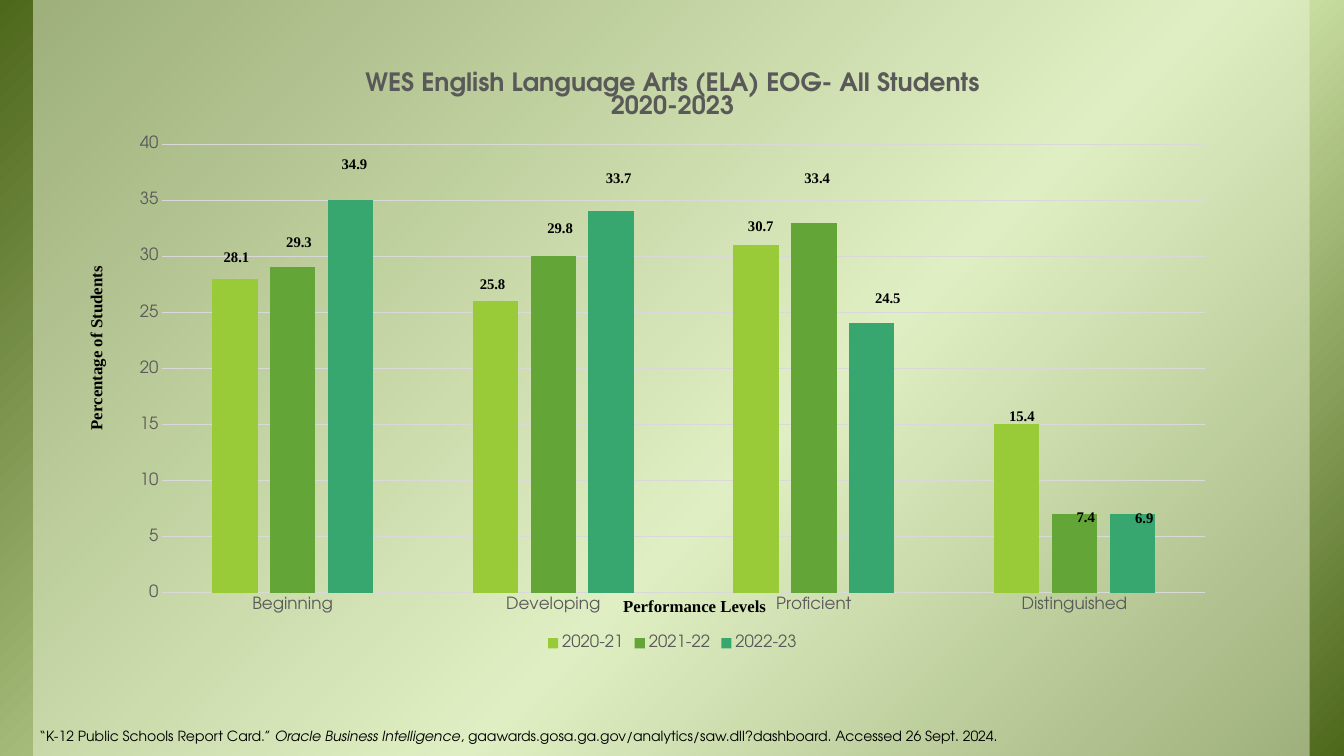
import pptx
import pptx.chart.data
import pptx.dml.color
import pptx.enum.chart
import pptx.enum.dml
import pptx.enum.shapes
import pptx.enum.text
import pptx.oxml
import pptx.oxml.ns
import pptx.util
from dataclasses import dataclass

LEVELS = ["Beginning", "Developing", "Proficient", "Distinguished"]
SCORES = {
    "2020-21": [28.1, 25.8, 30.7, 15.4],
    "2021-22": [29.3, 29.8, 33.4, 7.4],
    "2022-23": [34.9, 33.7, 24.5, 6.9],
}
# Left and top of each value's label, by year and level
LABEL_SPOTS = {
    "2020-21": [(2.12, 2.42), (4.66, 2.69), (7.32, 2.11), (9.91, 4.0)],
    "2021-22": [(2.74, 2.27), (5.33, 2.13), (7.88, 1.64), (10.58, 5.0)],
    "2022-23": [(3.29, 1.5), (5.91, 1.64), (8.58, 2.83), (11.16, 5.01)],
}
TITLE = ["WES English Language Arts (ELA) EOG- All Students", "2020-2023"]
AXIS_TITLES = [  # text, left, top, rotation
    ("Percentage of Students", -0.31, 3.31, 270),
    ("Performance Levels", 5.62, 5.88, 0),
]
CITATION = [  # text, italic
    ("“K-12 Public Schools Report Card.” ", False),
    ("Oracle Business Intelligence", True),
    (", gaawards.gosa.ga.gov/analytics/saw.dll?dashboard. Accessed 26 Sept. 2024.", False),
]
WIDTH, HEIGHT = 13.33, 7.5
CHART_W, CHART_H = 11, 6
PLOT = {"x": 0.44 / CHART_W, "y": 0.93 / CHART_H,  # shares of the chart
        "w": 10.34 / CHART_W, "h": 4.45 / CHART_H}


@dataclass(frozen=True)
class Theme:
    sans: str = "TeX Gyre Adventor"
    serif: str = "Times New Roman"
    text: str = "000000"
    muted: str = "595959"
    grid: str = "D9D9D9"
    panel: str = "EBF5D7"
    dark: str = "4D671B"
    light: str = "D6EAAF"
    bars: tuple = ("99CB38", "63A537", "37A76F")
    title: float = 18
    axis: float = 12
    value: float = 10.5
    note: float = 10


THEME = Theme()
inch = pptx.util.Inches
rgb = pptx.dml.color.RGBColor.from_string
qn = pptx.oxml.ns.qn
NS = pptx.oxml.ns.nsdecls


def style(font, size, color, name, bold=False):
    font.size, font.name, font.bold = pptx.util.Pt(size), name, bold
    font.color.rgb = rgb(color)


def add_panel(s, left, width):
    sp = s.shapes.add_shape(pptx.enum.shapes.MSO_SHAPE.RECTANGLE,
                            inch(left), 0, inch(width), inch(HEIGHT))
    sp.shadow.inherit = False
    sp.line.fill.background()
    return sp


def add_backdrop(s):
    """Diagonal green gradient with a half-transparent panel over it."""
    fill = add_panel(s, 0, WIDTH).fill
    fill.gradient()
    fill.gradient_angle = 315
    first, last = fill.gradient_stops
    for stop, position in ((first, 0), (last, 1)):
        stop.color.rgb, stop.position = rgb(THEME.dark), position
    stops = fill._fill._gradFill.find(qn("a:gsLst"))
    stops.insert(1, pptx.oxml.parse_xml(
        f'<a:gs {NS("a")} pos="58000"><a:srgbClr val="{THEME.light}"/></a:gs>'))

    sp = add_panel(s, 0.33, 12.66)
    sp.fill.solid()
    sp.fill.fore_color.rgb = rgb(THEME.panel)
    color = sp._element.spPr.find(qn("a:solidFill"))[0]
    color.append(pptx.oxml.parse_xml(f'<a:alpha {NS("a")} val="50000"/>'))


def add_text(s, runs, box, size, name, bold=False, centred=False, spacing=None):
    tb = s.shapes.add_textbox(*map(inch, box))
    tf = tb.text_frame
    tf.word_wrap = True
    tf.auto_size = pptx.enum.text.MSO_AUTO_SIZE.SHAPE_TO_FIT_TEXT
    p = tf.paragraphs[0]
    style(p.font, size, THEME.text, name, bold)
    p.line_spacing = spacing
    if centred:
        p.alignment = pptx.enum.text.PP_ALIGN.CENTER
    for text, italic in runs:
        r = p.add_run()
        r.text = text
        if italic:
            r.font.italic = True
    return tb


def add_score_chart(s):
    data = pptx.chart.data.CategoryChartData(number_format="0")
    data.categories = LEVELS
    for year, values in SCORES.items():
        data.add_series(year, [round(value) for value in values])
    chart = s.shapes.add_chart(pptx.enum.chart.XL_CHART_TYPE.COLUMN_CLUSTERED,
                               inch(1.17), inch(0.5), inch(CHART_W), inch(CHART_H),
                               data).chart
    style(chart.font, THEME.note, THEME.text, THEME.sans)

    tf = chart.chart_title.text_frame
    for i, line in enumerate(TITLE):
        p = tf.add_paragraph() if i else tf.paragraphs[0]
        p.text = line
        for font in (p.font, p.runs[0].font):
            style(font, THEME.title, THEME.muted, THEME.sans, True)
    chart.chart_title.include_in_layout = False

    plot = chart.plots[0]
    plot.gap_width, plot.overlap, plot.vary_by_categories = 219, -27, False
    for series, color in zip(plot.series, THEME.bars):
        series.format.fill.solid()
        series.format.fill.fore_color.rgb = rgb(color)

    chart.has_legend = True
    chart.legend.position = pptx.enum.chart.XL_LEGEND_POSITION.BOTTOM
    chart.legend.include_in_layout = False
    style(chart.legend.font, THEME.axis, THEME.muted, THEME.sans)

    cat, val = chart.category_axis, chart.value_axis
    for axis in (cat, val):
        axis.major_tick_mark = pptx.enum.chart.XL_TICK_MARK.NONE
        style(axis.tick_labels.font, THEME.axis, THEME.muted, THEME.sans)
    for line in (cat.format.line, val.major_gridlines.format.line):
        line.color.rgb, line.width = rgb(THEME.grid), pptx.util.Pt(0.75)
    val.format.line.fill.background()
    val.minimum_scale, val.maximum_scale, val.major_unit = 0, 40, 5

    area = chart._chartSpace.chart.plotArea
    for old in area.findall(qn("c:layout")):
        area.remove(old)
    sides = "".join(f'<c:{k}Mode val="edge"/>' for k in "xy")
    sides += "".join(f'<c:{k} val="{v}"/>' for k, v in PLOT.items())
    area.insert(0, pptx.oxml.parse_xml(
        f'<c:layout {NS("c")}><c:manualLayout><c:layoutTarget val="inner"/>'
        f'{sides}</c:manualLayout></c:layout>'))


def main():
    prs = pptx.Presentation()
    prs.slide_width, prs.slide_height = inch(WIDTH), inch(HEIGHT)
    s = prs.slides.add_slide(prs.slide_layouts[6])
    add_backdrop(s)
    add_score_chart(s)
    for year, values in SCORES.items():
        for value, spot in zip(values, LABEL_SPOTS[year]):
            add_text(s, [(str(value), False)], (*spot, 0.58, 0.28),
                     THEME.value, THEME.serif, bold=True, spacing=0.95)
    add_text(s, CITATION, (0.29, 7.17, 12.75, 0.27), THEME.note, THEME.sans)
    for text, left, top, rotation in AXIS_TITLES:
        tb = add_text(s, [(text, False)], (left, top, 2.54, 0.29), THEME.axis,
                      THEME.serif, bold=True, centred=True, spacing=0.95)
        tb.rotation = rotation
    prs.save("out.pptx")


if __name__ == "__main__":
    main()
